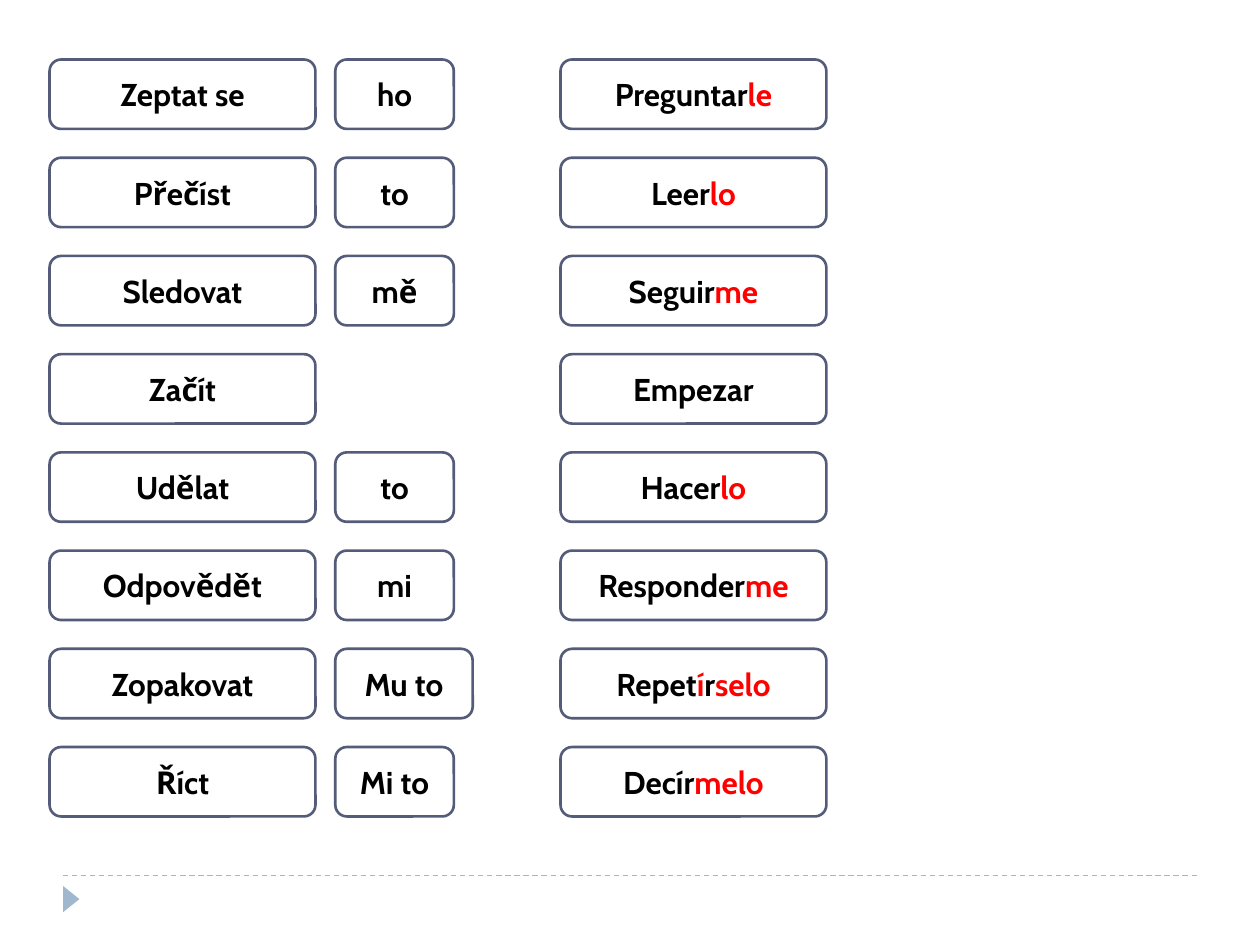
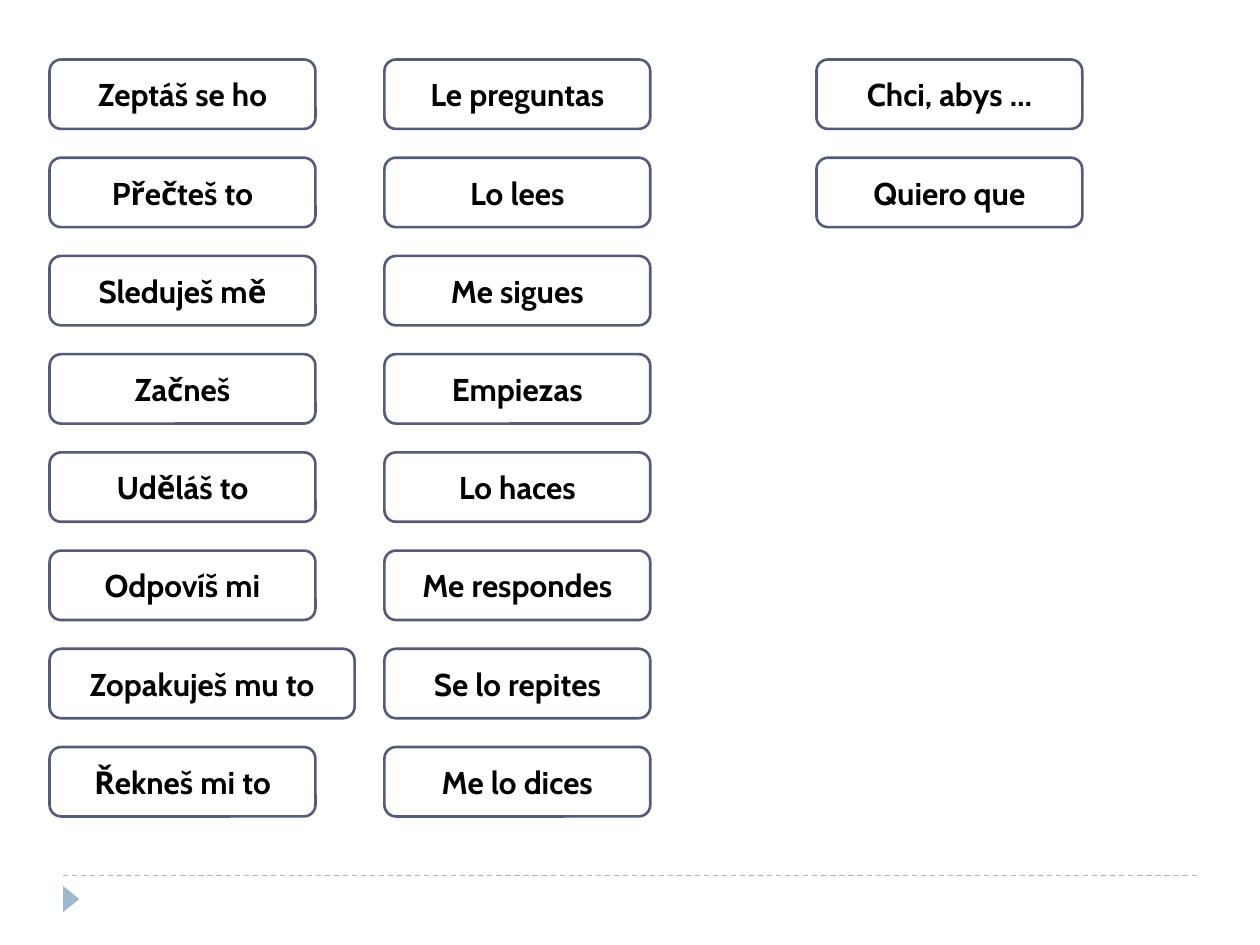
import pptx
import pptx.dml.color
import pptx.enum.dml
import pptx.enum.shapes
import pptx.enum.text
import pptx.util
from lxml import etree

Cm, Pt = pptx.util.Cm, pptx.util.Pt
SHAPES = pptx.enum.shapes.MSO_SHAPE

COLOURS = {
    "card": "FFFFFF",
    "border": "545C79",
    "text": "000000",
    "pronoun": "FF0000",
    "footer": "9FB8CD",
}
FIRST_ROW, ROW_STEP, CARD_HEIGHT = 1.2, 1.98, 1.4
VERB_WIDTH, PRONOUN_WIDTH = 5.36, 2.39

# Each column: left edge, usual card width, card texts from top to bottom.
# A bar switches between plain and highlighted letters; None skips a row.
INFINITIVES = [
    (1, VERB_WIDTH, ["Zeptat se", "Přečíst", "Sledovat", "Začít", "Udělat",
                     "Odpovědět", "Zopakovat", "Říct"]),
    (6.76, PRONOUN_WIDTH, ["ho", "to", "mě", None, "to", "mi", "Mu to", "Mi to"]),
    (11.3, VERB_WIDTH, ["Preguntar|le", "Leer|lo", "Seguir|me", "Empezar", "Hacer|lo",
                        "Responder|me", "Repet|í|r|selo", "Decír|melo"]),
]
CONJUGATED = [
    (1, VERB_WIDTH, ["Zeptáš se ho", "Přečteš to", "Sleduješ mě", "Začneš", "Uděláš to",
                     "Odpovíš mi", "Zopakuješ mu to", "Řekneš mi to"]),
    (7.75, VERB_WIDTH, ["Le preguntas", "Lo lees", "Me sigues", "Empiezas", "Lo haces",
                        "Me respondes", "Se lo repites", "Me lo dices"]),
    (16.46, VERB_WIDTH, ["Chci, abys …", "Quiero que"]),
]
WIDER_CARDS = {"Mu to": 2.77, "Zopakuješ mu to": 6.15}


def colour(name):
    return pptx.dml.color.RGBColor.from_string(COLOURS[name])


def add_filled(slide, kind, box, fill):
    """Add a shape without shadow; box is left, top, width, height in cm."""
    shape = slide.shapes.add_shape(kind, *map(Cm, box))
    shape.shadow.inherit = False
    shape.fill.solid()
    shape.fill.fore_color.rgb = colour(fill)
    return shape


deck = pptx.Presentation()
deck.slide_width, deck.slide_height = Cm(25.4), Cm(19.05)

for columns in (INFINITIVES, CONJUGATED):
    slide = deck.slides.add_slide(deck.slide_layouts[6])

    footer_rule = slide.shapes.add_connector(
        pptx.enum.shapes.MSO_CONNECTOR.STRAIGHT, Cm(1.27), Cm(17.65), Cm(24.13), Cm(17.65))
    footer_rule.line.color.rgb = colour("footer")
    footer_rule.line.width = Pt(0.75)
    footer_rule.line.dash_style = pptx.enum.dml.MSO_LINE.DASH
    etree.SubElement(footer_rule.element.spPr, pptx.oxml.ns.qn("a:effectLst"))

    footer_arrow = add_filled(slide, SHAPES.ISOSCELES_TRIANGLE, (1.17, 17.96, 0.53, 0.33), "footer")
    footer_arrow.rotation = 90
    footer_arrow.line.fill.background()

    for left, usual_width, words in columns:
        for row, word in enumerate(words):
            if word is None:
                continue
            width = WIDER_CARDS.get(word, usual_width)
            card = add_filled(slide, SHAPES.ROUNDED_RECTANGLE,
                              (left, FIRST_ROW + row * ROW_STEP, width, CARD_HEIGHT), "card")
            card.line.color.rgb = colour("border")
            card.line.width = Pt(1.5)
            card.text_frame.vertical_anchor = pptx.enum.text.MSO_ANCHOR.MIDDLE
            label = card.text_frame.paragraphs[0]
            label.alignment = pptx.enum.text.PP_ALIGN.CENTER
            label.font.name = "Cabin"
            label.font.size = Pt(18)
            label.font.bold = True
            label.font.color.rgb = colour("text")
            for index, letters in enumerate(word.split("|")):
                part = label.add_run()
                part.text = letters
                if index % 2:
                    part.font.color.rgb = colour("pronoun")

deck.save("out.pptx")
